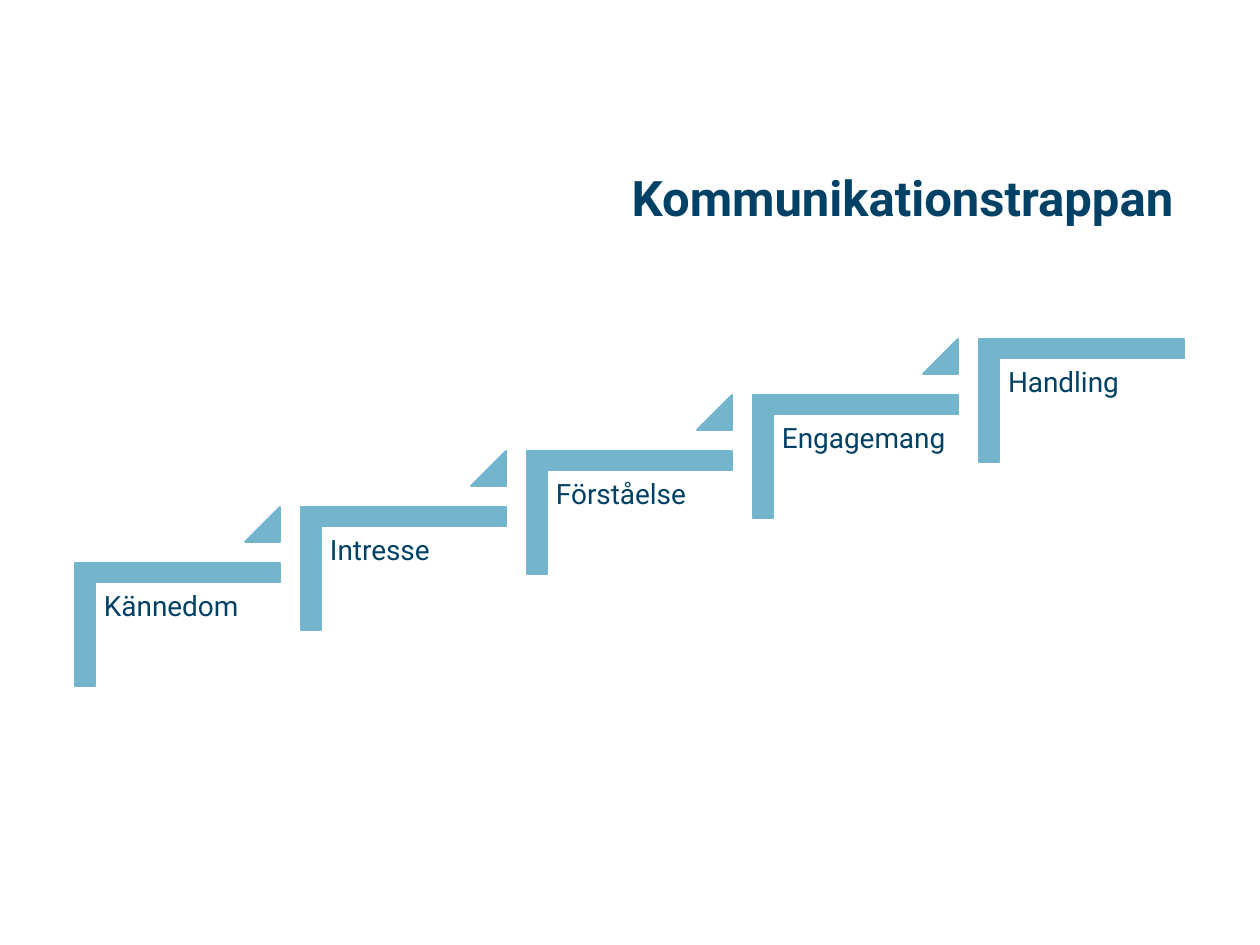
from pptx import Presentation
from pptx.dml.color import RGBColor
from pptx.enum.shapes import MSO_SHAPE
from pptx.enum.text import MSO_ANCHOR, PP_ALIGN
from pptx.util import Pt

SCALE = 914400 / 126  # EMU per px
NAVY, BLUE = "004165", "72B5CC"
STEP_X, STEP_Y = 226, -56

deck = Presentation()
deck.slide_width, deck.slide_height = round(1260 * SCALE), round(945 * SCALE)
page = deck.slides.add_slide(deck.slide_layouts[6])


def add_text(text, left, top, width, height, size, bold=False, inset=9,
             align=PP_ALIGN.LEFT, anchor=MSO_ANCHOR.TOP, line_spacing=1.0):
    box = page.shapes.add_textbox(*[round(v * SCALE) for v in (left, top, width, height)])
    frame = box.text_frame
    frame.word_wrap = True
    frame.vertical_anchor = anchor
    frame.margin_left = frame.margin_right = round(inset * SCALE)
    frame.margin_top = frame.margin_bottom = round(inset * SCALE)
    para = frame.paragraphs[0]
    para.alignment = align
    para.line_spacing = line_spacing
    span = para.add_run()
    span.text = text
    span.font.name = "Roboto"
    span.font.size = Pt(size)
    span.font.bold = bold
    span.font.color.rgb = RGBColor.from_string(NAVY)


def add_blue_shape(kind, left, top, width, height, adjustments, rotation=0):
    shape = page.shapes.add_shape(kind, *[round(v * SCALE) for v in (left, top, width, height)])
    shape.rotation = rotation
    for index, value in enumerate(adjustments):
        shape.adjustments[index] = value
    shape.shadow.inherit = False
    shape.fill.solid()
    shape.fill.fore_color.rgb = RGBColor.from_string(BLUE)
    shape.line.color.rgb = RGBColor.from_string(BLUE)
    shape.line.width = Pt(1)


# Title
add_text("Kommunikationstrappan", 74, 160, 1112, 74, size=28, bold=True, inset=13,
         align=PP_ALIGN.RIGHT, anchor=MSO_ANCHOR.MIDDLE)

# Staircase: each step has a corner, a label and a triangle leading to the next
steps = ["Kännedom", "Intresse", "Förståelse", "Engagemang", "Handling"]
for number, label in enumerate(steps):
    x, y = number * STEP_X, number * STEP_Y
    add_blue_shape(MSO_SHAPE.CORNER, 116 + x, 522 + y, 123, 205, [0.16, 0.16], rotation=90)
    add_text(label, 95 + x, 583 + y, 185, 163, size=16, line_spacing=0.9)
    if number < len(steps) - 1:
        add_blue_shape(MSO_SHAPE.ISOSCELES_TRIANGLE, 245 + x, 507 + y, 35, 35, [1])

deck.save("out.pptx")
